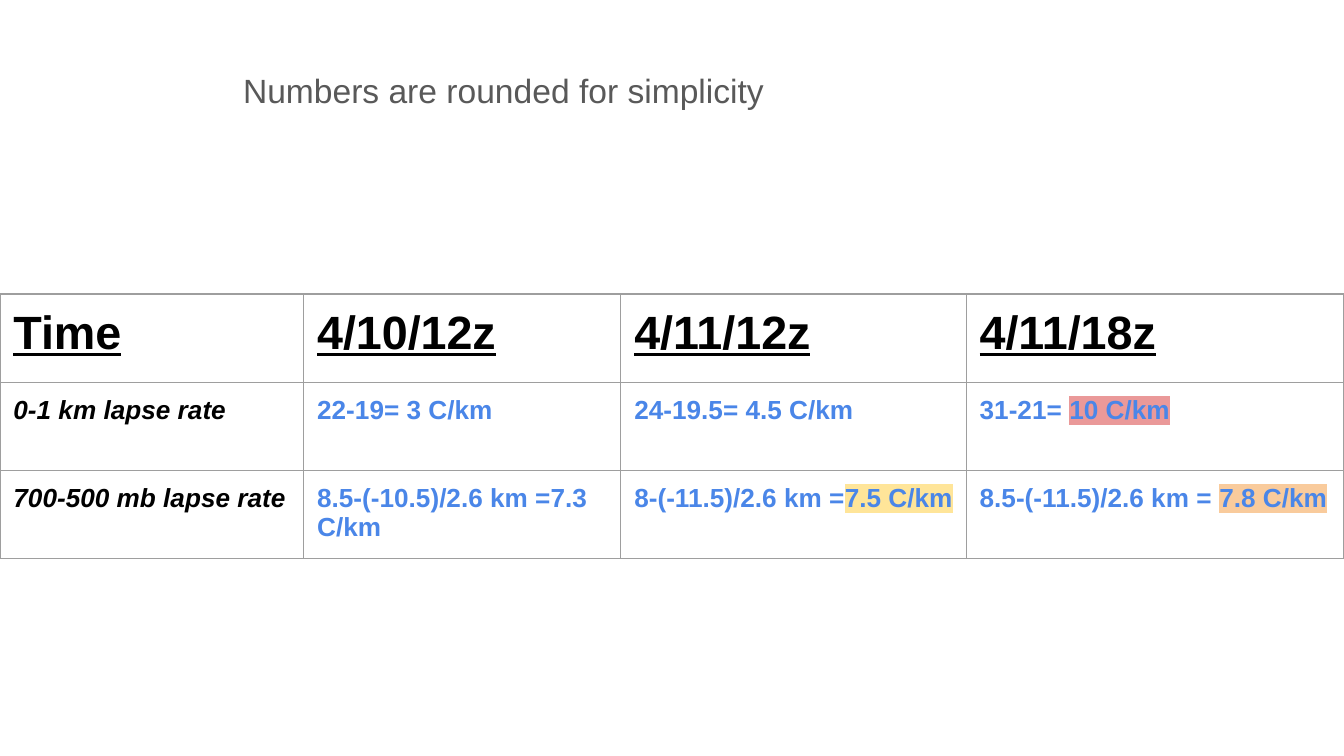
from lxml import etree
from pptx import Presentation
from pptx import util as u
from pptx.dml.color import RGBColor
from pptx.oxml.ns import qn

W = u.Inches(10)
H = W * 9 // 16
INSET = u.Inches(0.1)
FONT = "Arial"
COLORS = {
    "note": "595959", "label": "000000", "value": "4A86E8", "border": "9E9E9E",
    "red": "EA9999", "yellow": "FFE599", "orange": "F9CB9C",
}
COL_SHARES = [0.226, 0.236, 0.257, 0.281]
# A cell is a list of (text, highlight) runs.
ROWS = [
    [[("Time", None)], [("4/10/12z", None)], [("4/11/12z", None)], [("4/11/18z", None)]],
    [[("0-1 km lapse rate", None)],
     [("22-19= 3 C/km", None)],
     [("24-19.5= 4.5 C/km", None)],
     [("31-21= ", None), ("10 C/km", "red")]],
    [[("700-500 mb lapse rate", None)],
     [("8.5-(-10.5)/2.6 km =7.3 C/km", None)],
     [("8-(-11.5)/2.6 km =", None), ("7.5 C/km", "yellow")],
     [("8.5-(-11.5)/2.6 km = ", None), ("7.8 C/km", "orange")]],
]


def add_color(parent, tag, color):
    el = etree.SubElement(parent, qn(tag))
    etree.SubElement(el, qn("a:srgbClr"), val=COLORS[color])
    return el


def add_run(p, string, size, color, highlight=None, **style):
    r = p.add_run()
    r.text = string
    r.font.name, r.font.size = FONT, u.Pt(size)
    r.font.color.rgb = RGBColor.from_string(COLORS[color])
    for name, value in style.items():
        setattr(r.font, name, value)
    if highlight:
        rpr = r.font._element
        rpr.find(qn("a:solidFill")).addnext(add_color(rpr, "a:highlight", highlight))


def set_insets(box):
    box.margin_left = box.margin_right = box.margin_top = box.margin_bottom = INSET


def set_borders(cell):
    tcpr = cell._tc.get_or_add_tcPr()
    for side in ("a:lnL", "a:lnR", "a:lnT", "a:lnB"):
        ln = etree.SubElement(tcpr, qn(side), w=str(u.Pt(0.75)))
        add_color(ln, "a:solidFill", "border")


def cell_style(row, col):
    if row == 0:
        return dict(size=25, color="label", bold=True, underline=True)
    if col == 0:
        return dict(size=14, color="label", bold=True, italic=True)
    return dict(size=14, color="value", bold=True)


def add_note(s, x, y, w, h):
    tf = s.shapes.add_textbox(x, y, w, h).text_frame
    tf.word_wrap = True
    set_insets(tf)
    add_run(tf.paragraphs[0], "Numbers are rounded for simplicity", 18, "note")


def add_lapse_rates(s, x, y, w, h):
    table = s.shapes.add_table(len(ROWS), len(COL_SHARES), x, y, w, h).table
    table.first_row = table.horz_banding = False
    for column, share in zip(table.columns, COL_SHARES):
        column.width = int(w * share)
    for i, row in enumerate(ROWS):
        table.rows[i].height = h // len(ROWS)
        for j, runs in enumerate(row):
            cell = table.cell(i, j)
            set_insets(cell)
            set_borders(cell)
            cell.fill.background()
            for string, highlight in runs:
                add_run(cell.text_frame.paragraphs[0], string,
                        highlight=highlight, **cell_style(i, j))


def main():
    prs = Presentation()
    prs.slide_width, prs.slide_height = W, H
    s = prs.slides.add_slide(prs.slide_layouts[6])
    add_lapse_rates(s, 0, int(H * 0.389), W, int(H * 0.35))
    add_note(s, int(W * 0.171), int(H * 0.075), int(W * 0.715), int(H * 0.219))
    prs.save("out.pptx")


if __name__ == "__main__":
    main()
